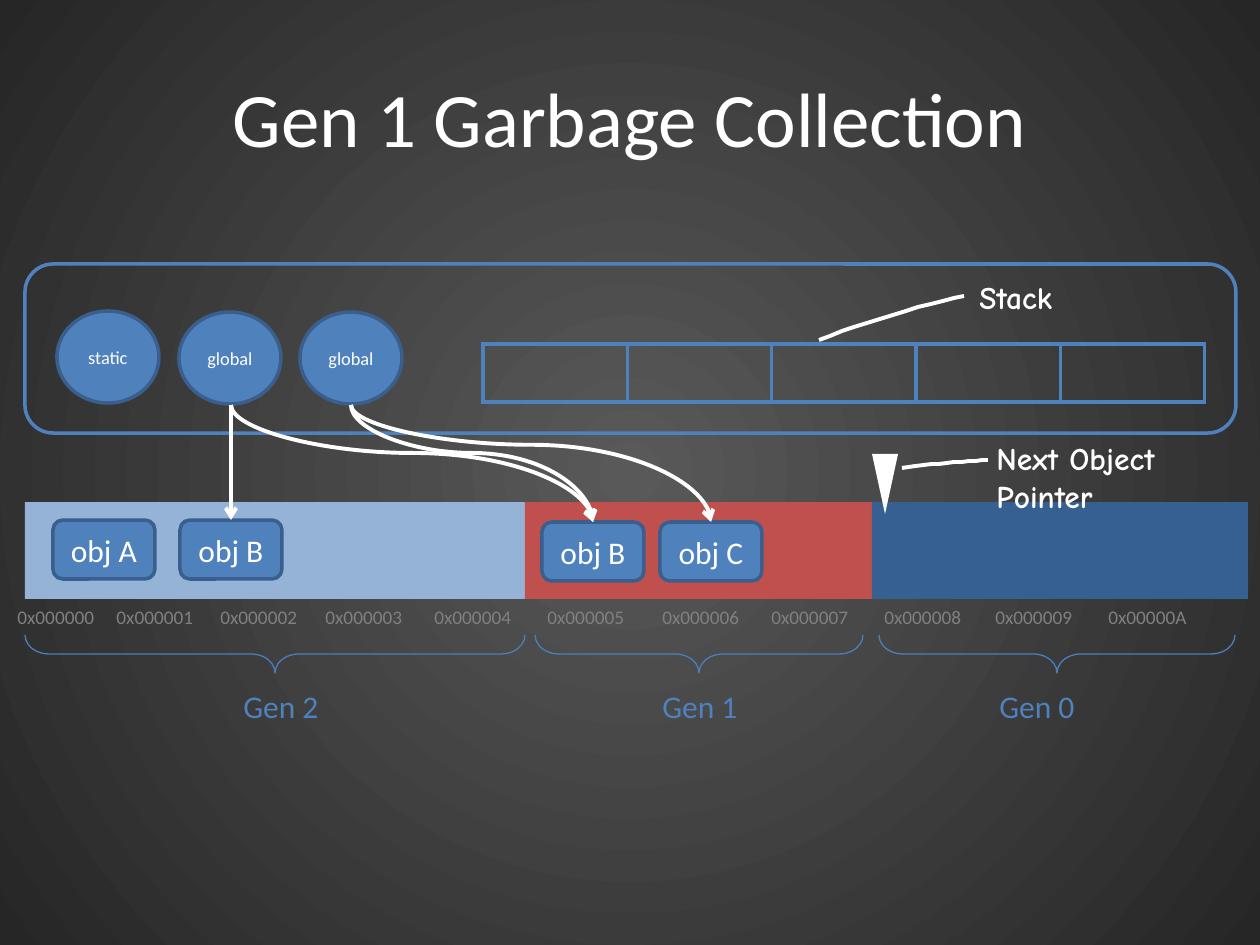
from pptx import Presentation
from pptx import util as u
from pptx.dml.color import RGBColor
from pptx.enum import shapes, text
from pptx.oxml import parse_xml
from pptx.oxml.ns import nsdecls, qn

SCALE = 914400 / 126  # EMU in one px
COLORS = {
    "white": "FFFFFF", "accent": "4F81BD", "edge": "3A5F8C", "brace": "4B7EBC",
    "gen2": "95B3D7", "gen1": "C0504D", "gen0": "376092", "address": "808080",
    "center": "595959", "rim": "262626",
}
BODY, HAND = "Calibri", "Comic Neue"
KINDS = shapes.MSO_SHAPE
ADDRESS_LEFTS = [5, 104, 208, 313, 422, 535, 650, 759, 872, 983, 1096]
MEMORY = [(25, 1171, "gen2"), (525, 671, "gen1"), (872, 376, "gen0")]
GENERATIONS = [("Gen 2", 25, 525, 231), ("Gen 1", 535, 863, 650), ("Gen 0", 879, 1235, 987)]
ROOTS = [("static", 57, 311), ("global", 179, 312), ("global", 300, 312)]
OBJECTS = [("obj A", 53, 520), ("obj B", 180, 520), ("obj B", 542, 522), ("obj C", 660, 522)]


def px(*lengths):
    return [u.Emu(round(length * SCALE)) for length in lengths]


def rgb(name):
    return RGBColor.from_string(COLORS[name])


def apply_format(target, **values):
    for name, value in values.items():
        setattr(target, name, value)


def style_line(line, color, width):
    line.color.rgb = rgb(color)
    line.width = u.Pt(width)


def write(frame, words, size, color, font=BODY, bold=False, align=text.PP_ALIGN.LEFT):
    paragraph = frame.paragraphs[0]
    paragraph.alignment = align
    run = paragraph.add_run()
    run.text = words
    apply_format(run.font, name=font, size=u.Pt(size), bold=bold)
    run.font.color.rgb = rgb(color)


def add_background(slide):
    fill = slide.background.fill
    fill.gradient()
    for stop, color in zip(fill.gradient_stops, ("center", "rim")):
        stop.color.rgb = rgb(color)
    gradient = slide.element.xpath(".//p:bg//a:gradFill")[0]
    gradient.remove(gradient.find(qn("a:lin")))
    gradient.append(parse_xml(
        f'<a:path {nsdecls("a")} path="circle">'
        '<a:fillToRect l="50000" t="50000" r="50000" b="50000"/></a:path>'))


def add_label(slide, words, box, size, color, wrap=False, **style):
    frame = slide.shapes.add_textbox(*px(*box)).text_frame
    frame.word_wrap = wrap
    write(frame, words, size, color, **style)


def add_block(slide, kind, box, fill=None, edge=None, width=2):
    shape = slide.shapes.add_shape(kind, *px(*box))
    shape.shadow.inherit = False
    if fill:
        shape.fill.solid()
        shape.fill.fore_color.rgb = rgb(fill)
    else:
        shape.fill.background()
    if edge:
        style_line(shape.line, edge, width)
    else:
        shape.line.fill.background()
    return shape


def add_node(slide, kind, words, box, size):
    shape = add_block(slide, kind, box, "accent", "edge")
    apply_format(shape.text_frame, vertical_anchor=text.MSO_ANCHOR.MIDDLE, word_wrap=True,
                 margin_left=0, margin_right=0)
    write(shape.text_frame, words, size, "white", align=text.PP_ALIGN.CENTER)
    return shape


def add_brace(slide, left, right):
    # A right brace turned by a quarter, so its width and height swap
    length, depth, top = right - left, 38, 635
    box = ((left + right - depth) / 2, top + (depth - length) / 2, depth, length)
    brace = add_block(slide, KINDS.RIGHT_BRACE, box, edge="brace", width=0.75)
    brace.rotation = 90
    brace.adjustments[0] = 0.63


def add_pointer_line(slide, start, first, second, end):
    # Hand-drawn stroke: points along a cubic curve
    def point(t):
        s = 1 - t
        return tuple(s**3 * a + 3 * s * s * t * b + 3 * s * t * t * c + t**3 * d
                     for a, b, c, d in zip(start, first, second, end))

    builder = slide.shapes.build_freeform(*start, scale=SCALE)
    builder.add_line_segments([point(i / 12) for i in range(1, 13)], close=False)
    stroke = builder.convert_to_shape()
    stroke.shadow.inherit = False
    stroke.fill.background()
    style_line(stroke.line, "white", 2.25)


def add_arrow(slide, kind, ends):
    arrow = slide.shapes.add_connector(kind, *px(*ends))
    style_line(arrow.line, "white", 2.25)
    properties = arrow.element.spPr
    properties.find(qn("a:ln")).append(parse_xml(f'<a:tailEnd {nsdecls("a")} type="arrow"/>'))
    properties.append(parse_xml(f'<a:effectLst {nsdecls("a")}/>'))
    return arrow


def add_curved_arrow(slide, start, end, bend):
    # Leaves downwards: the connector is laid on its side, then turned and flipped
    (x1, y1), (x2, y2) = start, end
    middle_x, middle_y = (x1 + x2) / 2, (y1 + y2) / 2
    half_width, half_height = (y2 - y1) / 2, (x2 - x1) / 2
    arrow = add_arrow(slide, shapes.MSO_CONNECTOR.CURVE,
                      (middle_x - half_width, middle_y - half_height,
                       middle_x + half_width, middle_y + half_height))
    properties = arrow.element.spPr
    transform = properties.find(qn("a:xfrm"))
    transform.set("rot", "16200000")
    transform.set("flipH", "1")
    properties.find(qn("a:prstGeom")).find(qn("a:avLst")).append(parse_xml(
        f'<a:gd {nsdecls("a")} name="adj1" fmla="val {round(bend * 100000)}"/>'))


def add_stack(slide):
    table = slide.shapes.add_table(1, 5, *px(483, 344, 722, 58)).table
    apply_format(table, first_row=False, horz_banding=False)
    for cell in table.iter_cells():
        properties = cell._tc.get_or_add_tcPr()
        for side in ("lnL", "lnR", "lnT", "lnB"):
            properties.append(parse_xml(
                f'<a:{side} {nsdecls("a")} w="{u.Pt(2.25)}"><a:solidFill>'
                f'<a:srgbClr val="{COLORS["accent"]}"/></a:solidFill></a:{side}>'))
        cell.fill.background()


def main():
    presentation = Presentation()
    presentation.slide_width, presentation.slide_height = px(1260, 945)
    slide = presentation.slides.add_slide(presentation.slide_layouts[5])
    add_background(slide)

    # Title
    title = slide.shapes.title
    apply_format(title, **dict(zip(("left", "top", "width", "height"), px(63, 38, 1134, 158))))
    title.text_frame.vertical_anchor = text.MSO_ANCHOR.MIDDLE
    write(title.text_frame, "Gen 1 Garbage Collection", 44, "white", align=text.PP_ALIGN.CENTER)

    # Heap memory and its addresses
    for left, width, color in MEMORY:
        add_block(slide, KINDS.RECTANGLE, (left, 502, width, 97), color)
    for number, left in enumerate(ADDRESS_LEFTS):
        width = 115 if number == 10 else 103
        add_label(slide, f"0x{number:06X}", (left, 599, width, 36), 11, "address")

    # Next object pointer
    marker = add_block(slide, KINDS.ISOSCELES_TRIANGLE, (872, 454, 26, 60), "white")
    marker.rotation = 180
    add_pointer_line(slide, (902, 468), (930, 464), (965, 461), (988, 460))
    add_label(slide, "Next Object Pointer", (984, 433, 240, 88), 18, "white",
              wrap=True, font=HAND, bold=True)

    # Roots frame and stack
    add_stack(slide)
    add_pointer_line(slide, (819, 340), (861, 322), (925, 305), (964, 296))
    add_label(slide, "Stack", (967, 272, 107, 50), 18, "white", font=HAND, bold=True)
    add_block(slide, KINDS.ROUNDED_RECTANGLE, (25, 264, 1211, 169), edge="accent")

    # Generations
    for name, left, right, label_left in GENERATIONS:
        add_brace(slide, left, right)
        add_label(slide, name, (label_left, 681, 102, 50), 18, "accent")

    # Roots and objects
    for name, left, top in ROOTS:
        add_node(slide, KINDS.OVAL, name, (left, top, 102, 92), 10.5)
    objects = [add_node(slide, KINDS.ROUNDED_RECTANGLE, name, (left, top, 102, 59), 18)
               for name, left, top in OBJECTS]

    # References
    first_global, second_global = (231, 405), (351, 405)
    add_curved_arrow(slide, first_global, (593, 522), 0.41)
    add_curved_arrow(slide, second_global, (593, 522), 0.41)
    add_curved_arrow(slide, second_global, (711, 522), 0.34)
    straight = add_arrow(slide, shapes.MSO_CONNECTOR.STRAIGHT, (*first_global, 231, 520))
    straight.end_connect(objects[1], 0)

    presentation.save("out.pptx")


if __name__ == "__main__":
    main()
